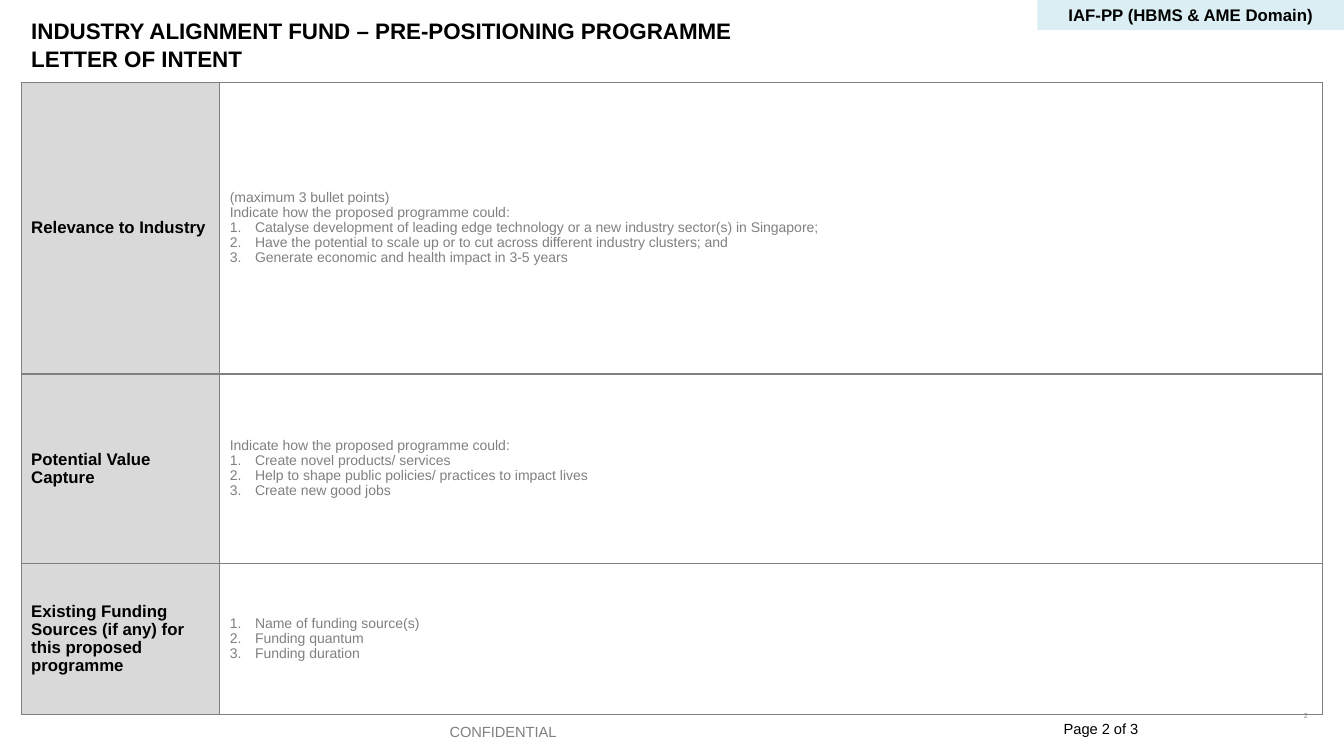
from lxml import etree
from pptx import Presentation
from pptx.dml.color import RGBColor
from pptx.enum.shapes import MSO_SHAPE
from pptx.enum.text import MSO_ANCHOR as Anchor, MSO_AUTO_SIZE as AutoSize, PP_ALIGN as Align
from pptx.oxml.ns import qn
from pptx.util import Inches, Pt

# Content
TITLE = "INDUSTRY ALIGNMENT FUND – PRE-POSITIONING PROGRAMME\vLETTER OF INTENT"
BANNER = "IAF-PP (HBMS & AME Domain)"
# Label, row height, introductory lines, numbered points
SECTIONS = [
    ("Relevance to Industry", 2.89,
     ["(maximum 3 bullet points)",
      "Indicate how the proposed programme could:"],
     ["Catalyse development of leading edge technology or a new industry sector(s) in Singapore;",
      "Have the potential to scale up or to cut across different industry clusters; and",
      "Generate economic and health impact in 3-5 years"]),
    ("Potential Value Capture", 1.88,
     ["Indicate how the proposed programme could:"],
     ["Create novel products/ services",
      "Help to shape public policies/ practices to impact lives",
      "Create new good jobs"]),
    ("Existing Funding Sources (if any) for this proposed programme", 1.5,
     [],
     ["Name of funding source(s)", "Funding quantum", "Funding duration"]),
]
COLUMN_WIDTHS = (1.97, 10.94)

BLACK = RGBColor(0x00, 0x00, 0x00)
GREY = RGBColor(0x80, 0x80, 0x80)
PALE_GREY = RGBColor(0x8C, 0x8C, 0x8C)
LABEL_FILL = RGBColor(0xD9, 0xD9, 0xD9)
BANNER_FILL = RGBColor(0xDB, 0xEE, 0xF4)

# Text, position, size, colour, alignment, anchor
SMALL_TEXTS = [
    ("2", (9.96, 6.9, 3.11, 0.4), 5.2, PALE_GREY, Align.RIGHT, Anchor.MIDDLE),
    ("Page 2 of 3", (9.89, 7.09, 1.5, 0.29), 10.5, BLACK, Align.RIGHT, Anchor.TOP),
    ("CONFIDENTIAL", (4.24, 7.12, 1.5, 0.29), 10.5, GREY, Align.CENTER, Anchor.TOP),
]


def write(paragraph, text, size, color, bold=False, align=Align.LEFT, spacing=None):
    paragraph.text = text
    paragraph.alignment = align
    paragraph.line_spacing = spacing
    font = paragraph.font
    font.name, font.size, font.bold = "Arial", Pt(size), bold
    font.color.rgb = color


def add_number(paragraph):
    properties = paragraph._p.get_or_add_pPr()
    properties.set("marL", str(Inches(0.25)))
    properties.set("indent", str(-Inches(0.25)))
    etree.SubElement(properties, qn("a:buFont"), typeface="+mj-lt")
    etree.SubElement(properties, qn("a:buAutoNum"), type="arabicPeriod")


def add_borders(cell):
    properties = cell._tc.get_or_add_tcPr()
    for position, side in enumerate(("a:lnL", "a:lnR", "a:lnT", "a:lnB")):
        line = etree.Element(qn(side), w=str(Pt(1)))
        fill = etree.SubElement(line, qn("a:solidFill"))
        etree.SubElement(fill, qn("a:srgbClr"), val=str(GREY))
        properties.insert(position, line)


presentation = Presentation()
presentation.slide_width, presentation.slide_height = Inches(13.33), Inches(7.5)
slide = presentation.slides.add_slide(presentation.slide_layouts[5])

# Title
title = slide.shapes.title
title.left, title.top, title.width, title.height = map(Inches, (0.21, 0.11, 9.61, 0.6))
title.text_frame.auto_size = AutoSize.NONE
title.text_frame.vertical_anchor = Anchor.TOP
write(title.text_frame.paragraphs[0], TITLE, 16, BLACK, True, spacing=1.05)

# Section table
heights = [section[1] for section in SECTIONS]
box = (0.21, 0.82, sum(COLUMN_WIDTHS), sum(heights))
table = slide.shapes.add_table(len(SECTIONS), 2, *map(Inches, box)).table
table.first_row = table.horz_banding = False
for column, width in zip(table.columns, COLUMN_WIDTHS):
    column.width = Inches(width)

for row, (label, height, intro, points) in zip(table.rows, SECTIONS):
    row.height = Inches(height)
    label_cell, detail_cell = row.cells
    label_cell.fill.solid()
    label_cell.fill.fore_color.rgb = LABEL_FILL
    detail_cell.fill.background()
    for cell in row.cells:
        cell.vertical_anchor = Anchor.MIDDLE
        add_borders(cell)
    write(label_cell.text_frame.paragraphs[0], label, 12, BLACK, True, spacing=0.96)

    frame = detail_cell.text_frame
    for index, text in enumerate(intro + points):
        paragraph = frame.add_paragraph() if index else frame.paragraphs[0]
        if index >= len(intro):
            add_number(paragraph)
        write(paragraph, text, 10, GREY, spacing=0.96)

# Footer texts
for text, box, size, color, align, anchor in SMALL_TEXTS:
    frame = slide.shapes.add_textbox(*map(Inches, box)).text_frame
    frame.word_wrap = True
    frame.vertical_anchor = anchor
    write(frame.paragraphs[0], text, size, color, align=align)

# Domain banner
banner = slide.shapes.add_shape(MSO_SHAPE.RECTANGLE, *map(Inches, (10.29, 0, 3.04, 0.3)))
banner.shadow.inherit = False
banner.fill.solid()
banner.fill.fore_color.rgb = BANNER_FILL
banner.line.fill.background()
banner.text_frame.vertical_anchor = Anchor.MIDDLE
write(banner.text_frame.paragraphs[0], BANNER, 12, BLACK, True, Align.CENTER)

presentation.save("out.pptx")
